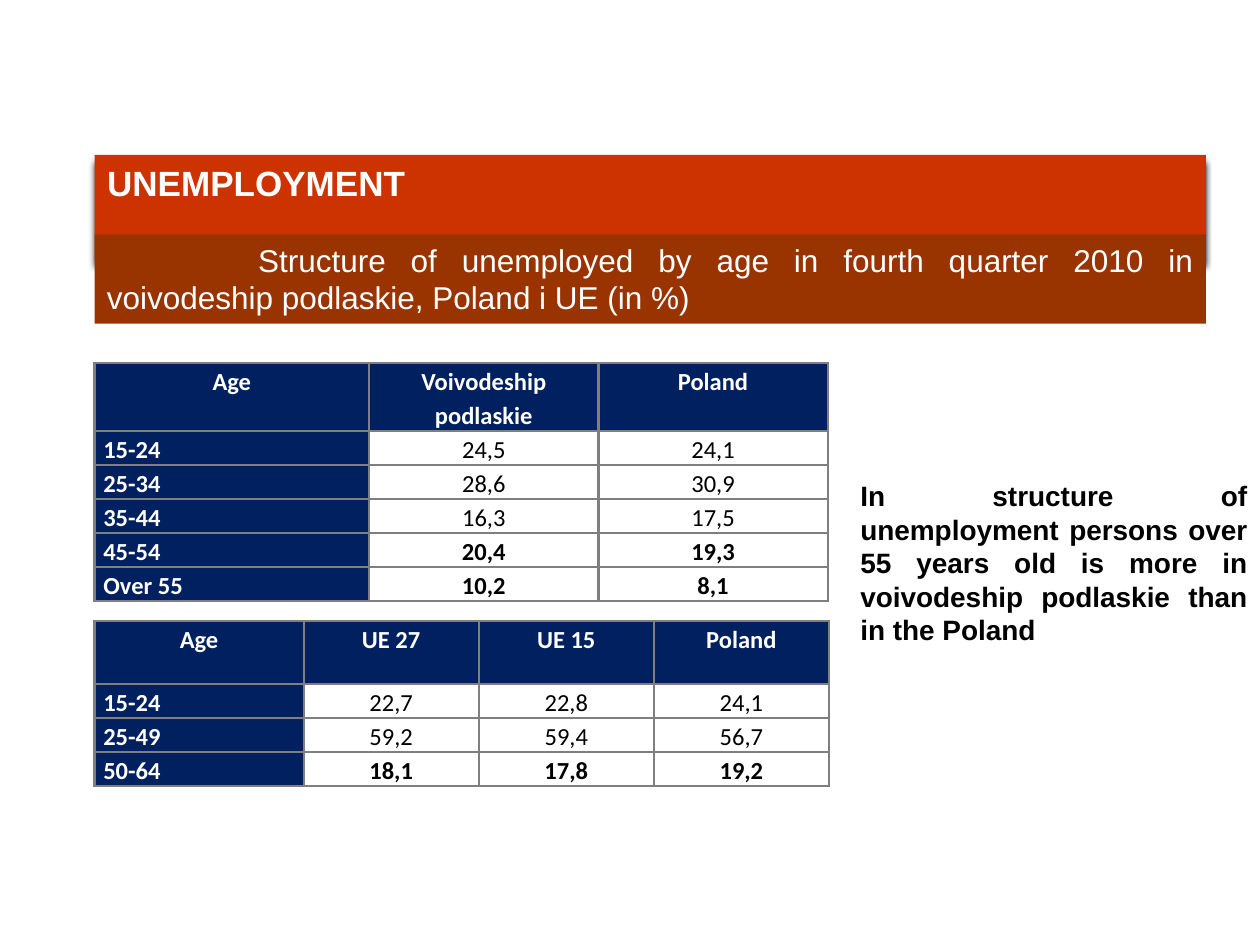
from dataclasses import dataclass

from lxml import etree
from pptx import Presentation
from pptx import util as u
from pptx.dml.color import RGBColor
from pptx.enum import shapes, text
from pptx.oxml import ns

RED = RGBColor(0xCC, 0x33, 0x00)
BROWN = RGBColor(0x99, 0x33, 0x00)
NAVY = RGBColor(0x00, 0x20, 0x60)
GRAY = RGBColor(0x7F, 0x7F, 0x7F)
WHITE = RGBColor(0xFF, 0xFF, 0xFF)
BLACK = RGBColor(0x00, 0x00, 0x00)
LEFT = 0.75
BANNER_WIDTH = 8.82
ROW_HEIGHT = 0.27


@dataclass
class TextStyle:
    size: int
    color: RGBColor
    bold: bool = False
    font: str = "Arial"


@dataclass
class AgeTable:
    top: float
    header_height: float
    widths: list[float]
    rows: list[list[str]]
    bold_rows: set[int]


AGE_TABLES = [
    AgeTable(2.88, 0.54, [2.18, 1.82, 1.82], [
        ["Age", "Voivodeship podlaskie", "Poland"],
        ["15-24", "24,5", "24,1"],
        ["25-34", "28,6", "30,9"],
        ["35-44", "16,3", "17,5"],
        ["45-54", "20,4", "19,3"],
        ["Over 55", "10,2", "8,1"],
    ], {4, 5}),
    AgeTable(4.93, 0.5, [1.66, 1.39, 1.39, 1.39], [
        ["Age", "UE 27", "UE 15", "Poland"],
        ["15-24", "22,7", "22,8", "24,1"],
        ["25-49", "59,2", "59,4", "56,7"],
        ["50-64", "18,1", "17,8", "19,2"],
    ], {3}),
]


def write(tf, content: str, style: TextStyle, align=text.PP_ALIGN.JUSTIFY):
    p = tf.paragraphs[0]
    p.alignment = align
    r = p.add_run()
    r.text = content
    r.font.name = style.font
    r.font.size = u.Pt(style.size)
    r.font.bold = style.bold
    r.font.color.rgb = style.color
    return p


def fit_frame(sp):
    tf = sp.text_frame
    tf.word_wrap = True
    tf.auto_size = text.MSO_AUTO_SIZE.SHAPE_TO_FIT_TEXT
    tf.vertical_anchor = text.MSO_ANCHOR.TOP
    return tf


def paint(sp, color: RGBColor) -> None:
    sp.fill.solid()
    sp.fill.fore_color.rgb = color
    sp.line.fill.background()


def add_shadow(sp) -> None:
    effects = etree.SubElement(sp.element.spPr, ns.qn("a:effectLst"))
    shadow = etree.SubElement(effects, ns.qn("a:outerShdw"), blurRad=str(u.Pt(4)),
                              dist=str(u.Pt(4)), dir="5400000", algn="ctr",
                              rotWithShape="0")
    etree.SubElement(shadow, ns.qn("a:srgbClr"), val=str(BLACK))


def add_borders(cell) -> None:
    tc_pr = cell._tc.get_or_add_tcPr()
    for side in ("lnL", "lnR", "lnT", "lnB"):
        line = etree.SubElement(tc_pr, ns.qn(f"a:{side}"), w=str(u.Pt(1.5)))
        fill = etree.SubElement(line, ns.qn("a:solidFill"))
        etree.SubElement(fill, ns.qn("a:srgbClr"), val=str(GRAY))


def fill_cell(cell, content: str, row: int, col: int, bold: bool) -> None:
    heading = row == 0 or col == 0
    cell.margin_left = cell.margin_right = u.Inches(0.07)
    cell.margin_top = cell.margin_bottom = 0
    add_borders(cell)
    if heading:
        cell.fill.solid()
        cell.fill.fore_color.rgb = NAVY
    else:
        cell.fill.background()
    if row and col == 2:
        cell.vertical_anchor = text.MSO_ANCHOR.BOTTOM
    align = text.PP_ALIGN.JUSTIFY if row and not col else text.PP_ALIGN.CENTER
    style = TextStyle(14, WHITE if heading else BLACK, heading or bold, "Calibri")
    write(cell.text_frame, content, style, align).line_spacing = 1.15


def add_age_table(s, spec_table: AgeTable) -> None:
    rows, widths = spec_table.rows, spec_table.widths
    heights = [spec_table.header_height] + [ROW_HEIGHT] * (len(rows) - 1)
    frame = s.shapes.add_table(len(rows), len(widths), u.Inches(LEFT),
                               u.Inches(spec_table.top), u.Inches(sum(widths)),
                               u.Inches(sum(heights)))
    table = frame.table
    table.first_row = table.horz_banding = False
    for column, width in zip(table.columns, widths):
        column.width = u.Inches(width)
    for i, (values, height) in enumerate(zip(rows, heights)):
        table.rows[i].height = u.Inches(height)
        for j, value in enumerate(values):
            fill_cell(table.cell(i, j), value, i, j, i in spec_table.bold_rows)


def main() -> None:
    prs = Presentation()
    prs.slide_width, prs.slide_height = u.Inches(10), u.Inches(7.5)
    s = prs.slides.add_slide(prs.slide_layouts.get_by_name("Title Only"))

    title = s.shapes.title
    title.left, title.top = u.Inches(LEFT), u.Inches(1.23)
    title.width, title.height = u.Inches(BANNER_WIDTH), u.Inches(0.44)
    paint(title, RED)
    add_shadow(title)
    write(fit_frame(title), "UNEMPLOYMENT", TextStyle(20, WHITE, True))

    subtitle = s.shapes.add_shape(shapes.MSO_SHAPE.RECTANGLE, u.Inches(LEFT),
                                  u.Inches(1.86), u.Inches(BANNER_WIDTH),
                                  u.Inches(0.71))
    subtitle.shadow.inherit = False
    paint(subtitle, BROWN)
    p = write(fit_frame(subtitle),
              "Structure of unemployed by age in fourth quarter 2010 in "
              "voivodeship podlaskie, Poland i UE (in %)", TextStyle(18, WHITE))
    p._p.get_or_add_pPr().set("indent", str(u.Inches(1.2)))

    for age_table in AGE_TABLES:
        add_age_table(s, age_table)

    note = s.shapes.add_textbox(u.Inches(6.73), u.Inches(3.75),
                                u.Inches(3.27), u.Inches(1.7))
    write(fit_frame(note),
          "In structure of unemployment persons over 55 years old is more in "
          "voivodeship podlaskie than in the Poland", TextStyle(16, BLACK, True))

    prs.save("out.pptx")


if __name__ == "__main__":
    main()
